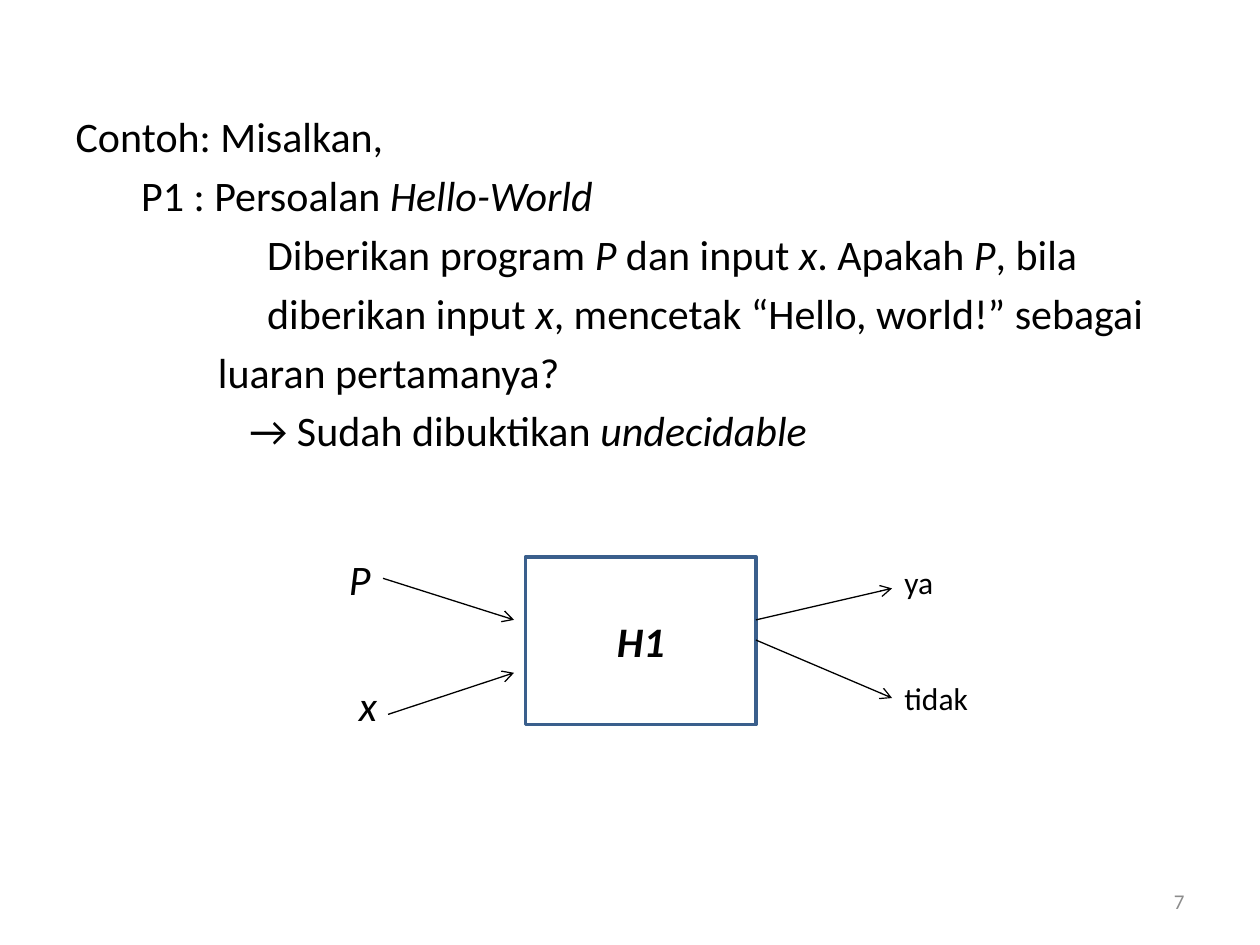
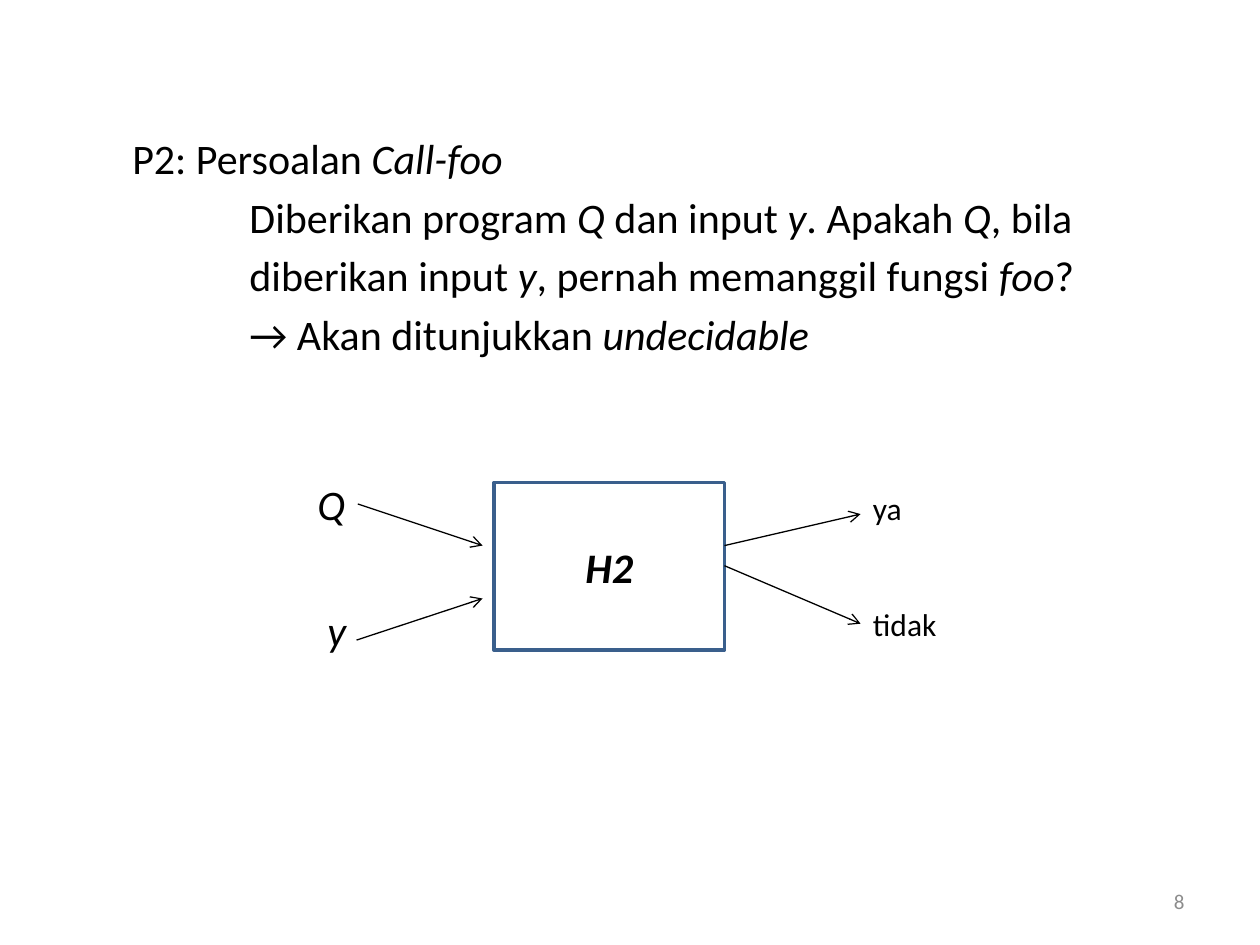
from dataclasses import dataclass

from lxml.etree import SubElement
from pptx import Presentation
from pptx.dml.color import RGBColor
from pptx.enum.shapes import MSO_CONNECTOR, MSO_SHAPE
from pptx.enum.text import MSO_ANCHOR, PP_ALIGN
from pptx.oxml.ns import qn
from pptx.util import Inches, Pt


@dataclass(frozen=True)
class Theme:
    font: str = "Calibri"
    ink: RGBColor = RGBColor(0x00, 0x00, 0x00)
    muted: RGBColor = RGBColor(0x8C, 0x8C, 0x8C)
    outline: RGBColor = RGBColor(0x3A, 0x5F, 0x8C)
    body_size: int = 24
    answer_size: int = 18
    number_size: int = 12
    outline_width: float = 2
    arrow_width: float = 0.75


class SlideBuilder:
    def __init__(self, deck, theme):
        self.deck = deck
        self.theme = theme
        self.page = None

    def new_page(self, number):
        self.page = self.deck.slides.add_slide(self.deck.slide_layouts[1])
        title = self.page.shapes.title.element
        title.getparent().remove(title)
        paragraph = self.text(str(number), 7.17, 6.95, 2.33, 0.4, self.theme.number_size, wrap=True)
        paragraph.font.color.rgb = self.theme.muted
        paragraph.alignment = PP_ALIGN.RIGHT

    def style(self, paragraph, size, italic=None):
        font = paragraph.font
        font.name = self.theme.font
        font.size = Pt(size)
        font.color.rgb = self.theme.ink
        font.italic = italic

    def text(self, words, left, top, width, height, size, italic=None, wrap=False):
        box = self.page.shapes.add_textbox(Inches(left), Inches(top), Inches(width), Inches(height))
        frame = box.text_frame
        frame.word_wrap = wrap
        frame.vertical_anchor = MSO_ANCHOR.MIDDLE if wrap else MSO_ANCHOR.TOP
        paragraph = frame.paragraphs[0]
        paragraph.text = words
        self.style(paragraph, size, italic)
        return paragraph

    def body(self, top, lines):
        box = self.page.placeholders[1]
        box.left, box.top = Inches(0.5), Inches(top)
        box.width, box.height = Inches(9), Inches(6.7 - top)
        frame = box.text_frame
        for index, (indent, line) in enumerate(lines):
            paragraph = frame.add_paragraph() if index else frame.paragraphs[0]
            properties = paragraph._p.get_or_add_pPr()
            properties.set("marL", str(Inches(indent)))
            properties.set("indent", "0")
            if index == 0:
                paragraph.space_before = Pt(0)
            SubElement(properties, qn("a:buNone"))
            self.style(paragraph, self.theme.body_size)
            for position, words in enumerate(line.split("*")):
                if words:
                    span = paragraph.add_run()
                    span.text = words
                    if position % 2:
                        span.font.italic = True

    def machine(self, name, left, top):
        box = self.page.shapes.add_shape(
            MSO_SHAPE.RECTANGLE, Inches(left), Inches(top), Inches(1.83), Inches(1.33)
        )
        box.shadow.inherit = False
        box.fill.background()
        box.line.color.rgb = self.theme.outline
        box.line.width = Pt(self.theme.outline_width)
        box.text_frame.vertical_anchor = MSO_ANCHOR.MIDDLE
        paragraph = box.text_frame.paragraphs[0]
        paragraph.text = name
        paragraph.alignment = PP_ALIGN.CENTER
        self.style(paragraph, self.theme.body_size, italic=True)
        paragraph.font.bold = True

    def arrow(self, start_x, start_y, end_x, end_y):
        line = self.page.shapes.add_connector(
            MSO_CONNECTOR.STRAIGHT, Inches(start_x), Inches(start_y), Inches(end_x), Inches(end_y)
        )
        line.line.color.rgb = self.theme.ink
        line.line.width = Pt(self.theme.arrow_width)
        SubElement(line.line._get_or_add_ln(), qn("a:tailEnd"), type="arrow")
        SubElement(line.element.spPr, qn("a:effectLst"))

    def decider(self, name, left, top, program, program_width, value, program_gap):
        size = self.theme.body_size
        self.machine(name, left, top)
        self.text(program, left - 1.5, top - 0.08, program_width, 0.5, size, italic=True)
        self.text(value, left - 1.42, top + 0.92, 0.35, 0.5, size, italic=True)
        self.arrow(left - program_gap, top + 0.17, left - 0.09, top + 0.5)
        self.arrow(left - 1.09, top + 1.25, left - 0.09, top + 0.92)
        answers = (("ya", 0.43, 0, 0.5, 0.25), ("tidak", 0.71, 0.92, 0.66, 1.12))
        for answer, width, drop, start, end in answers:
            self.text(answer, left + 2.91, top + drop, width, 0.4, self.theme.answer_size)
            self.arrow(left + 1.83, top + start, left + 2.91, top + end)


def main():
    deck = Presentation()
    deck.slide_width, deck.slide_height = Inches(10), Inches(7.5)
    builder = SlideBuilder(deck, Theme())

    builder.new_page(7)
    builder.body(0.83, [
        (0, "Contoh: Misalkan,"),
        (0.52, "P1 : Persoalan *Hello-World*"),
        (1.52, "Diberikan program *P* dan input *x*. Apakah *P*, bila"),
        (1.52, "diberikan input *x*, mencetak “Hello, world!” sebagai"),
        (1.13, "luaran pertamanya?"),
        (1.38, "→ Sudah dibuktikan *undecidable*"),
    ])
    builder.decider("H1", 4.17, 4.42, "P", 0.38, "x", program_gap=1.13)

    builder.new_page(8)
    builder.body(1, [
        (0.45, "P2: Persoalan *Call-foo*"),
        (1.38, "Diberikan program *Q* dan input *y*. Apakah *Q*, bila"),
        (1.38, "diberikan input *y*, pernah memanggil fungsi *foo*?"),
        (1.38, "→ Akan ditunjukkan *undecidable*"),
    ])
    builder.decider("H2", 3.92, 3.83, "Q", 0.43, "y", program_gap=1.08)

    deck.save("out.pptx")


if __name__ == "__main__":
    main()
